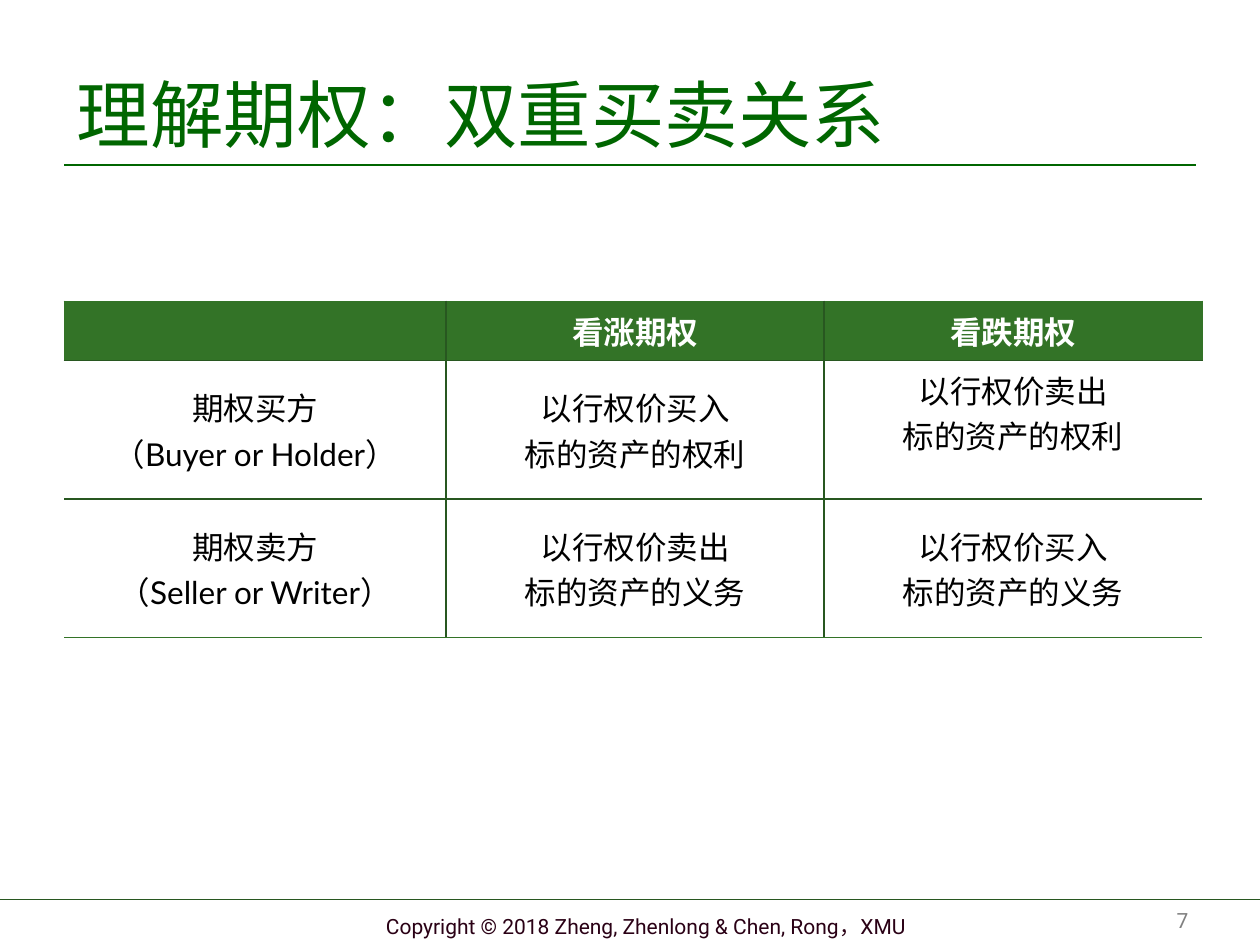
import pptx
import pptx.util
import pptx.oxml
import pptx.oxml.ns
from pptx.dml.color import RGBColor
from pptx.enum.shapes import MSO_CONNECTOR
from pptx.enum.text import MSO_ANCHOR, PP_ALIGN
from pptx.util import Inches
from lxml import etree

DARK_GREEN = RGBColor(0x28, 0x57, 0x20)
GREEN = RGBColor(0x33, 0x73, 0x27)
TITLE_GREEN = RGBColor(0x00, 0x66, 0x00)
FOOTER_COLOR = RGBColor(0x2A, 0x00, 0x15)
GRAY = RGBColor(0x80, 0x80, 0x80)
WHITE = RGBColor(0xFF, 0xFF, 0xFF)
BLACK = RGBColor(0x00, 0x00, 0x00)

RULES = [
    (0, 10, 7.14, DARK_GREEN),
    (0.51, 9.49, 1.31, TITLE_GREEN),
]
TEXTS = [
    ("理解期权：双重买卖关系", (0.51, 0.36, 9, 0.93), 42, TITLE_GREEN, PP_ALIGN.LEFT, 0.04),
    ("Copyright © 2018 Zheng, Zhenlong & Chen, Rong，XMU",
     (2.8, 7.19, 4.65, 0.31), 12, FOOTER_COLOR, PP_ALIGN.CENTER, 0.05),
    ("7", (7.2, 7.14, 2.33, 0.31), 12, GRAY, PP_ALIGN.RIGHT, 0.05),
]
OPTIONS = [
    [[], ["看涨期权"], ["看跌期权"]],
    [["期权买方", "（Buyer or Holder）"],
     ["以行权价买入", "标的资产的权利"],
     ["以行权价卖出", "标的资产的权利"]],
    [["期权卖方", "（Seller or Writer）"],
     ["以行权价卖出", "标的资产的义务"],
     ["以行权价买入", "标的资产的义务"]],
]
COLUMN_WIDTHS = [3.03, 3, 3]
ROW_HEIGHTS = [0.47, 1.1, 1.1]
TOP_ANCHORED = (1, 2)


def add_span(para, text, font_name, size, color, bold=False):
    span = para.add_run()
    span.text = text
    span.font.name = font_name
    span.font.size = pptx.util.Pt(size)
    span.font.color.rgb = color
    span.font.bold = bold


def add_rule(page, left, right, y, color):
    rule = page.shapes.add_connector(
        MSO_CONNECTOR.STRAIGHT, Inches(left), Inches(y), Inches(right), Inches(y))
    rule.line.color.rgb = color
    rule.line.width = pptx.util.Pt(1)
    etree.SubElement(rule._element.spPr, pptx.oxml.ns.qn("a:effectLst"))


def add_text(page, text, place, size, color, align, bottom):
    box = page.shapes.add_textbox(*map(Inches, place))
    frame = box.text_frame
    frame.word_wrap = True
    frame.vertical_anchor = MSO_ANCHOR.BOTTOM
    frame.margin_bottom = Inches(bottom)
    para = frame.paragraphs[0]
    para.alignment = align
    add_span(para, text, "Roboto", size, color)


def set_border(cell, side, color, width):
    namespace = pptx.oxml.ns.nsdecls("a")
    if color is None:
        border = f'<a:ln{side} {namespace} w="0"><a:noFill/></a:ln{side}>'
    else:
        border = (f'<a:ln{side} {namespace} w="{pptx.util.Pt(width)}"><a:solidFill>'
                  f'<a:srgbClr val="{color}"/></a:solidFill></a:ln{side}>')
    cell._tc.get_or_add_tcPr().append(pptx.oxml.parse_xml(border))


def style_cell(cell, row, column):
    inner, outer = (DARK_GREEN, 1), (GREEN, 0.75)
    header = row == 0
    edge = outer if header else (None, 0)
    borders = {
        "L": inner if column > 0 else edge,
        "R": inner if column < len(COLUMN_WIDTHS) - 1 else edge,
        "T": outer if header else inner,
        "B": inner if row < len(ROW_HEIGHTS) - 1 else outer,
    }
    for side, (color, width) in borders.items():
        set_border(cell, side, color, width)
    if header:
        cell.fill.solid()
        cell.fill.fore_color.rgb = GREEN
    else:
        cell.fill.background()
    top = (row, column) == TOP_ANCHORED
    cell.vertical_anchor = MSO_ANCHOR.TOP if top else MSO_ANCHOR.MIDDLE


def add_options_table(page):
    frame = page.shapes.add_table(
        len(ROW_HEIGHTS), len(COLUMN_WIDTHS), Inches(0.51), Inches(2.39),
        Inches(sum(COLUMN_WIDTHS)), Inches(sum(ROW_HEIGHTS)))
    table = frame.table
    table.horz_banding = False
    for column, width in zip(table.columns, COLUMN_WIDTHS):
        column.width = Inches(width)
    for row, height in zip(table.rows, ROW_HEIGHTS):
        row.height = Inches(height)
    for row, cells in enumerate(OPTIONS):
        for column, lines in enumerate(cells):
            cell = table.cell(row, column)
            style_cell(cell, row, column)
            for index, line in enumerate(lines):
                text = cell.text_frame
                para = text.add_paragraph() if index else text.paragraphs[0]
                para.alignment = PP_ALIGN.CENTER
                add_span(para, line, "Lato", 18, BLACK if row else WHITE, row == 0)


def main():
    deck = pptx.Presentation()
    deck.slide_width, deck.slide_height = Inches(10), Inches(7.5)
    page = deck.slides.add_slide(deck.slide_layouts[6])
    for rule in RULES:
        add_rule(page, *rule)
    for text in TEXTS:
        add_text(page, *text)
    add_options_table(page)
    deck.save("out.pptx")


if __name__ == "__main__":
    main()
